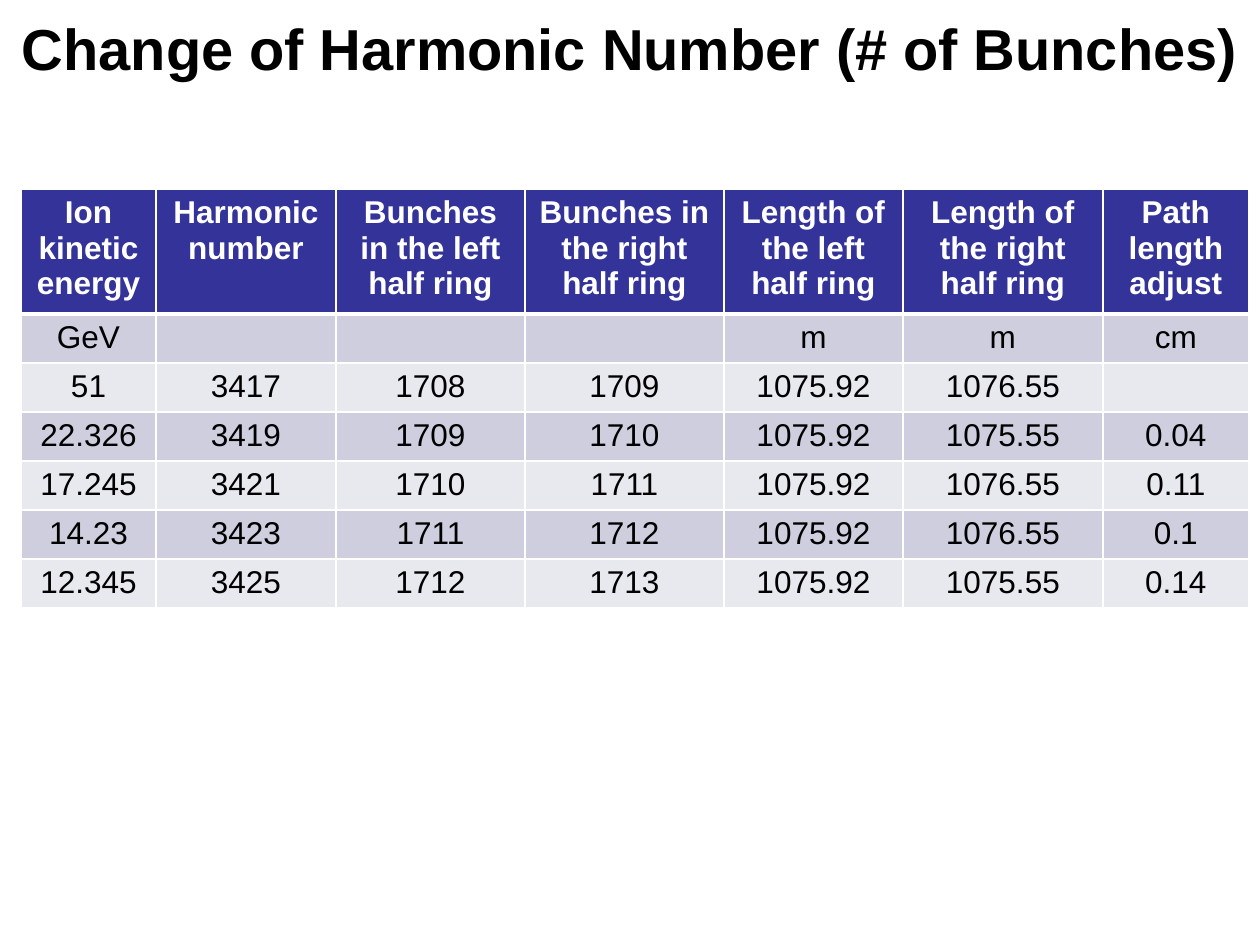
from lxml import etree
from pptx import Presentation
from pptx.dml.color import RGBColor
from pptx.enum.text import MSO_ANCHOR, MSO_AUTO_SIZE, PP_ALIGN
from pptx.oxml.ns import qn
from pptx.util import Pt

CENTER = PP_ALIGN.CENTER
MIDDLE = MSO_ANCHOR.MIDDLE
NO_FIT = MSO_AUTO_SIZE.NONE
SCALE = 914400 / 126
WHITE, BLACK, NAVY = "FFFFFF", "000000", "333399"
BANDS = ("CECEDE", "E8E8EF")
HEAD = {"name": "Arial", "size": Pt(18), "bold": True}
BODY = {**HEAD, "bold": False}
TITLE = {**HEAD, "size": Pt(33)}
COLS = (135, 180, 189, 199, 179, 200, 146)
HEAD_H, ROW_H = 125, 49
ROWS = (
    ("Ion kinetic energy", "Harmonic number", "Bunches in the left half ring",
     "Bunches in the right half ring", "Length of the left half ring",
     "Length of the right half ring", "Path length adjust"),
    ("GeV", "", "", "", "m", "m", "cm"),
    ("51", "3417", "1708", "1709", "1075.92", "1076.55", ""),
    ("22.326", "3419", "1709", "1710", "1075.92", "1075.55", "0.04"),
    ("17.245", "3421", "1710", "1711", "1075.92", "1076.55", "0.11"),
    ("14.23", "3423", "1711", "1712", "1075.92", "1076.55", "0.1"),
    ("12.345", "3425", "1712", "1713", "1075.92", "1075.55", "0.14"),
)


def px(num):
    """Turn pixels into EMU."""
    return round(num * SCALE)


def tint(code):
    """Turn a hex string into a colour."""
    return RGBColor.from_string(code)


def write(frame, text, form, color):
    """Put one centred, formatted paragraph into a text frame."""
    frame.text = text
    para = frame.paragraphs[0]
    para.alignment = CENTER
    for key, value in form.items():
        setattr(para.font, key, value)
    para.font.color.rgb = tint(color)
    for run in para.runs:
        for key, value in form.items():
            setattr(run.font, key, value)
        run.font.color.rgb = tint(color)


def edge(cell, side, width):
    """Draw one white border of a cell."""
    props = cell._tc.get_or_add_tcPr()
    line = etree.SubElement(props, qn(f"a:ln{side}"), w=str(Pt(width)))
    fill = etree.SubElement(line, qn("a:solidFill"))
    etree.SubElement(fill, qn("a:srgbClr"), val=WHITE)


def add_title(slide, left, top, width, height):
    """Place the slide title in its box."""
    title = slide.shapes.title
    title.left, title.top = px(left), px(top)
    title.width, title.height = px(width), px(height)
    frame = title.text_frame
    frame.auto_size = NO_FIT
    frame.word_wrap = True
    frame.vertical_anchor = MIDDLE
    write(frame, "Change of Harmonic Number (# of Bunches)", TITLE, BLACK)


def add_grid(slide, left, top):
    """Place the table of bunch numbers with its corner at left and top."""
    sizes = [HEAD_H] + [ROW_H] * (len(ROWS) - 1)
    grid = slide.shapes.add_table(
        len(ROWS), len(COLS), px(left), px(top),
        px(sum(COLS)), px(sum(sizes))).table
    for col, width in zip(grid.columns, COLS):
        col.width = px(width)
    for i, (row, size, texts) in enumerate(zip(grid.rows, sizes, ROWS)):
        row.height = px(size)
        for cell, text in zip(row.cells, texts):
            for side in "LRTB":
                thick = (i, side) in ((0, "B"), (1, "T"))
                edge(cell, side, 3 if thick else 1)
            cell.fill.solid()
            cell.fill.fore_color.rgb = tint(BANDS[(i - 1) % 2] if i else NAVY)
            write(cell.text_frame, text, BODY if i else HEAD,
                  BLACK if i else WHITE)


def main():
    """Build the slide and save it."""
    deck = Presentation()
    deck.slide_width, deck.slide_height = px(1260), px(945)
    slide = deck.slides.add_slide(deck.slide_layouts[5])
    add_title(slide, 0, 0, 1260, 95)
    add_grid(slide, 21, 189)
    deck.save("out.pptx")


if __name__ == "__main__":
    main()
